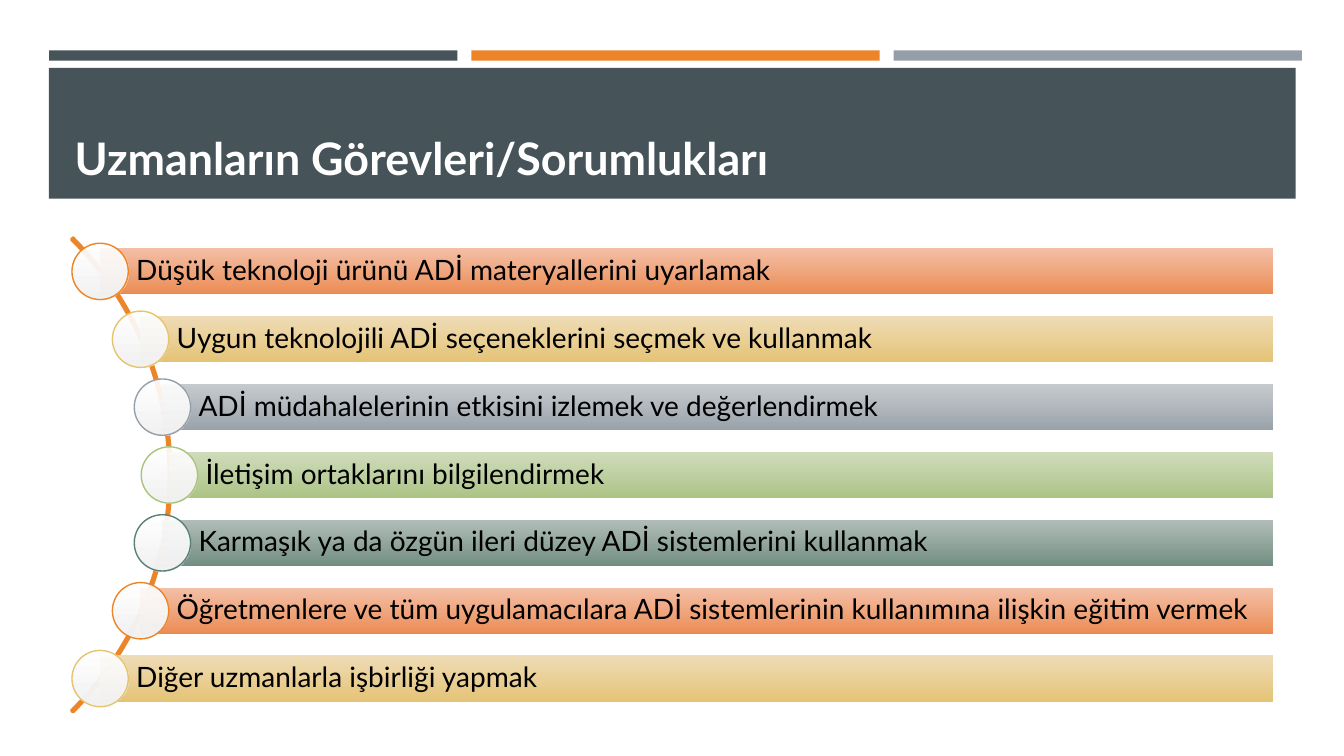
from math import sqrt

from lxml.etree import SubElement
from pptx import Presentation
from pptx.dml.color import RGBColor
from pptx.enum.shapes import MSO_SHAPE as SHAPE
from pptx.enum.text import MSO_ANCHOR as ANCHOR, PP_ALIGN as ALIGN
from pptx.oxml.ns import qn
from pptx.util import Cm, Pt

SLATE, ORANGE, GREY, WHITE = "465359", "ED8428", "969FA7", "FFFFFF"
CIRCLE_FILL = (WHITE, "F2F2F2")

# circle outline, bar gradient top, bar gradient bottom
PALETTE = [
    (ORANGE, "F3B89D", "ED8C53"),
    ("E6C46D", "EED9AE", "E6C476"),
    (GREY, "C0C5C9", "9BA3AB"),
    ("A9C37C", "CAD9B4", "ACC485"),
    ("5A8071", "A8B6B0", "728E82"),
]
DUTIES = [
    "Düşük teknoloji ürünü ADİ materyallerini uyarlamak",
    "Uygun teknolojili ADİ seçeneklerini seçmek ve kullanmak",
    "ADİ müdahalelerinin etkisini izlemek ve değerlendirmek",
    "İletişim ortaklarını bilgilendirmek",
    "Karmaşık ya da özgün ileri düzey ADİ sistemlerini kullanmak",
    "Öğretmenlere ve tüm uygulamacılara ADİ sistemlerinin kullanımına ilişkin eğitim vermek",
    "Diğer uzmanlarla işbirliği yapmak",
]

# Lengths in centimetres
ARC_X, ARC_Y, ARC_R = -4.14, 11.97, 8.46
CIRCLE_PATH_R = 8.41
ROW_PITCH, BAR_H, BAR_RIGHT, CIRCLE_D = 1.71, 1.14, 32.08, 1.42


def rgb(color):
    return RGBColor.from_string(color)


def add_shape(s, kind, box, fill=None, line=None, width=1):
    """Add a preset shape; fill is None, one colour or a (top, bottom) pair."""
    sp = s.shapes.add_shape(kind, *map(Cm, box))
    sp.shadow.inherit = False
    if fill is None:
        sp.fill.background()
    elif isinstance(fill, tuple):
        fill_gradient(sp, fill)
    else:
        sp.fill.solid()
        sp.fill.fore_color.rgb = rgb(fill)
    if line:
        sp.line.color.rgb = rgb(line)
        sp.line.width = Pt(width)
    else:
        sp.line.fill.background()
    return sp


def fill_gradient(sp, colors):
    """Fill downwards from a 90 % opaque first colour to the second."""
    sp.fill.gradient()
    sp.fill.gradient_angle = 270
    for stop, color in zip(sp.fill.gradient_stops, colors):
        stop.color.rgb = rgb(color)
    first = sp._element.spPr.find(".//" + qn("a:srgbClr"))
    SubElement(first, qn("a:alpha"), val="90000")


def set_text(sp, text, color, frame, font):
    tf = sp.text_frame
    for name, value in {"word_wrap": True, **frame}.items():
        setattr(tf, name, value)
    p = tf.paragraphs[0]
    p.alignment = ALIGN.LEFT
    p.line_spacing = 0.9
    r = p.add_run()
    r.text = text
    r.font.color.rgb = rgb(color)
    for name, value in {"name": "Lato", **font}.items():
        setattr(r.font, name, value)


def add_header(s, title):
    for i, color in enumerate((SLATE, ORANGE, GREY)):
        add_shape(s, SHAPE.RECTANGLE, (1.24 + 10.64 * i, 1.27, 10.29, 0.26), color)
    add_shape(s, SHAPE.RECTANGLE, (1.23, 1.71, 31.42, 3.3), SLATE)
    box = s.shapes.add_textbox(Cm(1.63), Cm(1.96), Cm(30.63), Cm(2.82))
    set_text(box, title, WHITE, {"vertical_anchor": ANCHOR.BOTTOM},
             {"size": Pt(32), "bold": True})


def add_arc(s):
    box = (ARC_X - ARC_R, ARC_Y - ARC_R, 2 * ARC_R, 2 * ARC_R)
    arc = add_shape(s, SHAPE.BLOCK_ARC, box, line=ORANGE, width=1.75)
    for i, value in enumerate((189, 27, 0.004)):
        arc.adjustments[i] = value


def add_duty(s, text, offset, colors):
    """Add a bar and its circle, centred on the arc at a vertical offset."""
    outline, *gradient = colors
    x = ARC_X + sqrt(CIRCLE_PATH_R ** 2 - offset ** 2)
    y = ARC_Y + offset
    bar = add_shape(s, SHAPE.RECTANGLE, (x, y - BAR_H / 2, BAR_RIGHT - x, BAR_H),
                    tuple(gradient))
    frame = {"vertical_anchor": ANCHOR.MIDDLE, "margin_left": Cm(0.91),
             "margin_right": Cm(0.14), "margin_top": Cm(0.14),
             "margin_bottom": Cm(0.14)}
    set_text(bar, text, "000000", frame, {"size": Pt(20)})
    add_shape(s, SHAPE.OVAL, (x - CIRCLE_D / 2, y - CIRCLE_D / 2, CIRCLE_D, CIRCLE_D),
              CIRCLE_FILL, outline)


def main():
    prs = Presentation()
    prs.slide_width, prs.slide_height = Cm(33.87), Cm(19.05)
    s = prs.slides.add_slide(prs.slide_layouts[6])
    add_header(s, "Uzmanların Görevleri/Sorumlukları")
    add_arc(s)
    middle = (len(DUTIES) - 1) / 2
    for i, text in enumerate(DUTIES):
        add_duty(s, text, (i - middle) * ROW_PITCH, PALETTE[i % len(PALETTE)])
    prs.save("out.pptx")


if __name__ == "__main__":
    main()
